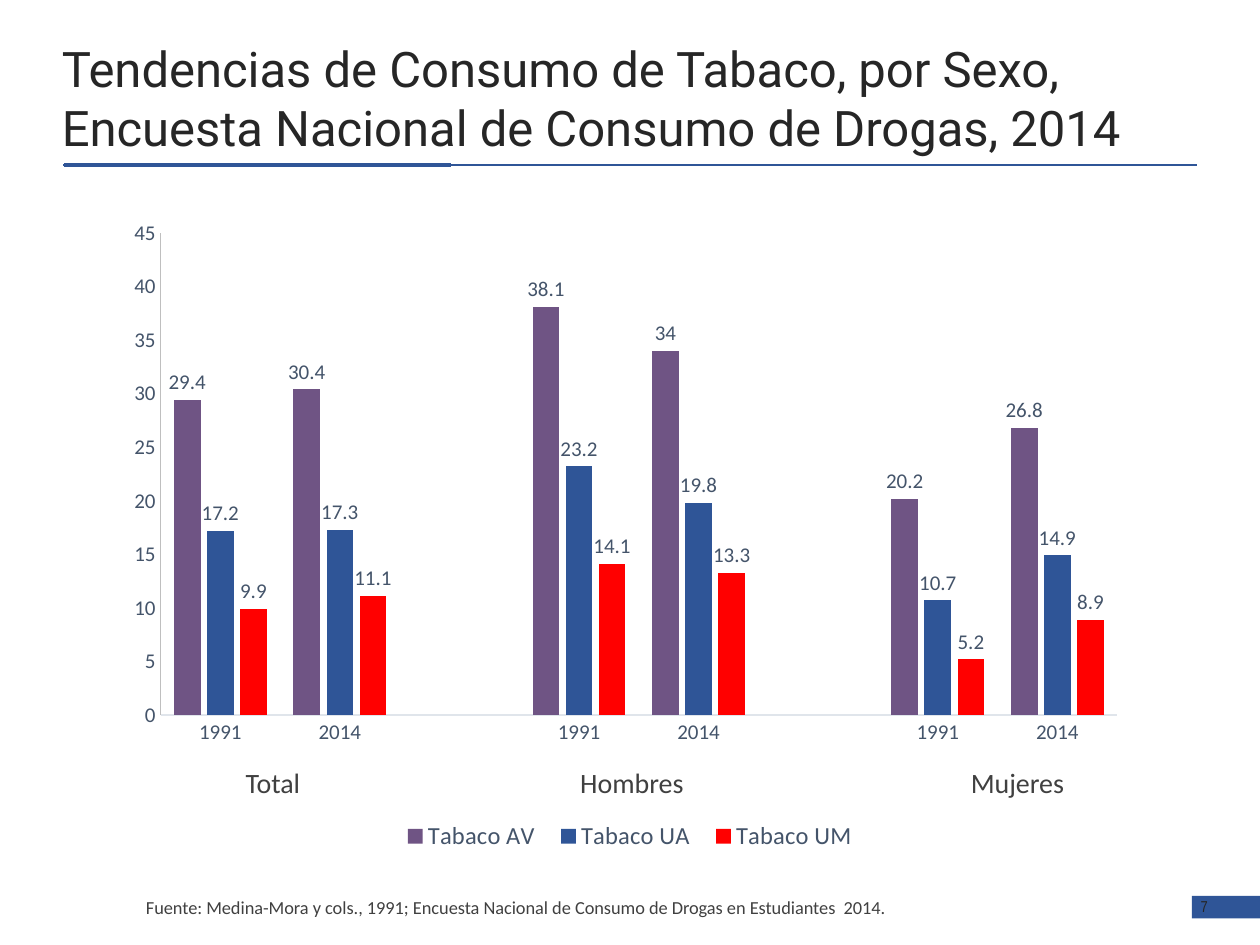
import pptx
import pptx.chart.data
import pptx.dml.color
import pptx.enum.chart
import pptx.enum.shapes
import pptx.enum.text
import pptx.oxml
import pptx.oxml.ns
import pptx.util
from dataclasses import dataclass

Inches = pptx.util.Inches


@dataclass
class Theme:
    blue: str = "2F5597"
    purple: str = "6F5484"
    red: str = "FF0000"
    title_ink: str = "262626"
    text_ink: str = "404040"
    chart_ink: str = "44546A"
    category_line: str = "E0E5EB"
    value_line: str = "BFBFBF"
    heading_font: str = "Roboto"
    body_font: str = "Calibri"
    number_font: str = "Arial Narrow"
    title_size: float = 28
    group_size: float = 16
    legend_size: float = 14
    chart_size: float = 12
    source_size: float = 10.5
    number_size: float = 9


theme = Theme()


def rgb(value):
    return pptx.dml.color.RGBColor.from_string(value)


def style(font, name, size, color):
    font.name = name
    font.size = pptx.util.Pt(size)
    font.color.rgb = rgb(color)


prs = pptx.Presentation()
prs.slide_width, prs.slide_height = Inches(10), Inches(7.5)
slide = prs.slides.add_slide(prs.slide_layouts[5])

# Rules under the title
for start, end, weight in [(0.5, 9.5, 1), (0.51, 3.58, 2.25)]:
    rule = slide.shapes.add_connector(
        pptx.enum.shapes.MSO_CONNECTOR.STRAIGHT,
        Inches(start), Inches(1.31), Inches(end), Inches(1.31))
    rule.line.color.rgb = rgb(theme.blue)
    rule.line.width = pptx.util.Pt(weight)
    rule._element.spPr.append(pptx.oxml.parse_xml(
        f"<a:effectLst {pptx.oxml.ns.nsdecls('a')}/>"))

# Page number band
band = slide.shapes.add_shape(
    pptx.enum.shapes.MSO_SHAPE.RECTANGLE,
    Inches(9.46), Inches(7.11), Inches(0.54), Inches(0.18))
band.shadow.inherit = False
band.fill.solid()
band.fill.fore_color.rgb = rgb(theme.blue)
band.line.fill.background()

# Title
title = slide.shapes.title
title.left, title.top = Inches(0.39), Inches(0.25)
title.width, title.height = Inches(8.98), Inches(1.04)
title.text_frame.text = ("Tendencias de Consumo de Tabaco, por Sexo, "
                         "Encuesta Nacional de Consumo de Drogas, 2014")
title.text_frame.auto_size = pptx.enum.text.MSO_AUTO_SIZE.NONE
title.text_frame.vertical_anchor = pptx.enum.text.MSO_ANCHOR.MIDDLE
heading = title.text_frame.paragraphs[0]
heading.alignment = pptx.enum.text.PP_ALIGN.LEFT
style(heading.font, theme.heading_font, theme.title_size, theme.title_ink)

# Chart data: an empty category separates the groups
consumption = pptx.chart.data.CategoryChartData()
consumption.categories = ["1991", "2014", "", "1991", "2014", "", "1991", "2014"]
series_rows = [
    ("Tabaco AV", theme.purple, (29.4, 30.4, None, 38.1, 34, None, 20.2, 26.8)),
    ("Tabaco UA", theme.blue, (17.2, 17.3, None, 23.2, 19.8, None, 10.7, 14.9)),
    ("Tabaco UM", theme.red, (9.9, 11.1, None, 14.1, 13.3, None, 5.2, 8.9)),
]
for name, _, values in series_rows:
    consumption.add_series(name, values)
chart = slide.shapes.add_chart(
    pptx.enum.chart.XL_CHART_TYPE.COLUMN_CLUSTERED,
    Inches(0.86), Inches(1.62), Inches(8.28), Inches(5.2), consumption).chart
chart.has_title = False
style(chart.font, theme.body_font, theme.chart_size, theme.chart_ink)

# Columns and their labels
plot = chart.plots[0]
plot.gap_width, plot.overlap = 100, -24
plot.vary_by_categories = False
for series, (_, color, _) in zip(plot.series, series_rows):
    series.format.fill.solid()
    series.format.fill.fore_color.rgb = rgb(color)
    series.invert_if_negative = False
    labels = series.data_labels
    labels.show_value = True
    labels.position = pptx.enum.chart.XL_LABEL_POSITION.OUTSIDE_END
    style(labels.font, theme.body_font, theme.chart_size, theme.chart_ink)

# Axes
for axis, color in [(chart.category_axis, theme.category_line),
                    (chart.value_axis, theme.value_line)]:
    axis.has_major_gridlines = False
    axis.major_tick_mark = pptx.enum.chart.XL_TICK_MARK.NONE
    axis.minor_tick_mark = pptx.enum.chart.XL_TICK_MARK.NONE
    axis.format.line.color.rgb = rgb(color)
    axis.format.line.width = pptx.util.Pt(0.75)
    style(axis.tick_labels.font, theme.body_font, theme.chart_size, theme.chart_ink)
chart.value_axis.minimum_scale = 0
chart.value_axis.maximum_scale = 45
chart.value_axis.major_unit = 5

# Legend
chart.has_legend = True
legend = chart.legend
legend.position = pptx.enum.chart.XL_LEGEND_POSITION.BOTTOM
legend.include_in_layout = False
style(legend.font, theme.body_font, theme.legend_size, theme.chart_ink)

# Fixed places for the plot area and the legend, as fractions of the chart
plot_area = chart._chartSpace.chart.plotArea
for old in plot_area.findall(pptx.oxml.ns.qn("c:layout")):
    plot_area.remove(old)
for old in legend._element.findall(pptx.oxml.ns.qn("c:layout")):
    legend._element.remove(old)
for parent, index, target, box in [
        (plot_area, 0, '<c:layoutTarget val="inner"/>', (0.05, 0.044, 0.917, 0.736)),
        (legend._element, 1, "", (0.27, 0.93, 0.46, 0.07))]:
    modes = '<c:xMode val="edge"/><c:yMode val="edge"/>'
    sizes = "".join(f'<c:{key} val="{part}"/>' for key, part in zip("xywh", box))
    parent.insert(index, pptx.oxml.parse_xml(
        f"<c:layout {pptx.oxml.ns.nsdecls('c')}><c:manualLayout>"
        f"{target}{modes}{sizes}</c:manualLayout></c:layout>"))

# Group names, source and page number
group = (theme.body_font, theme.group_size, theme.text_ink)
center, left = pptx.enum.text.PP_ALIGN.CENTER, pptx.enum.text.PP_ALIGN.LEFT
captions = [
    ("Total", (1.14, 6.03, 2.05, 0.37), center, True, group),
    ("Hombres", (3.99, 6.03, 2.05, 0.37), center, True, group),
    ("Mujeres", (7.05, 6.03, 2.05, 0.37), center, True, group),
    ("Fuente: Medina-Mora y cols., 1991; Encuesta Nacional de Consumo de "
     "Drogas en Estudiantes  2014.", (1.06, 7.06, 6.57, 0.28), left, True,
     (theme.body_font, theme.source_size, theme.text_ink)),
    ("7", (9.43, 7.07, 0.39, 0.25), left, False,
     (theme.number_font, theme.number_size, theme.title_ink)),
]
for words, box, alignment, wrap, look in captions:
    caption = slide.shapes.add_textbox(*map(Inches, box)).text_frame
    caption.word_wrap = wrap
    caption.text = words
    caption.paragraphs[0].alignment = alignment
    style(caption.paragraphs[0].font, *look)

prs.save("out.pptx")
